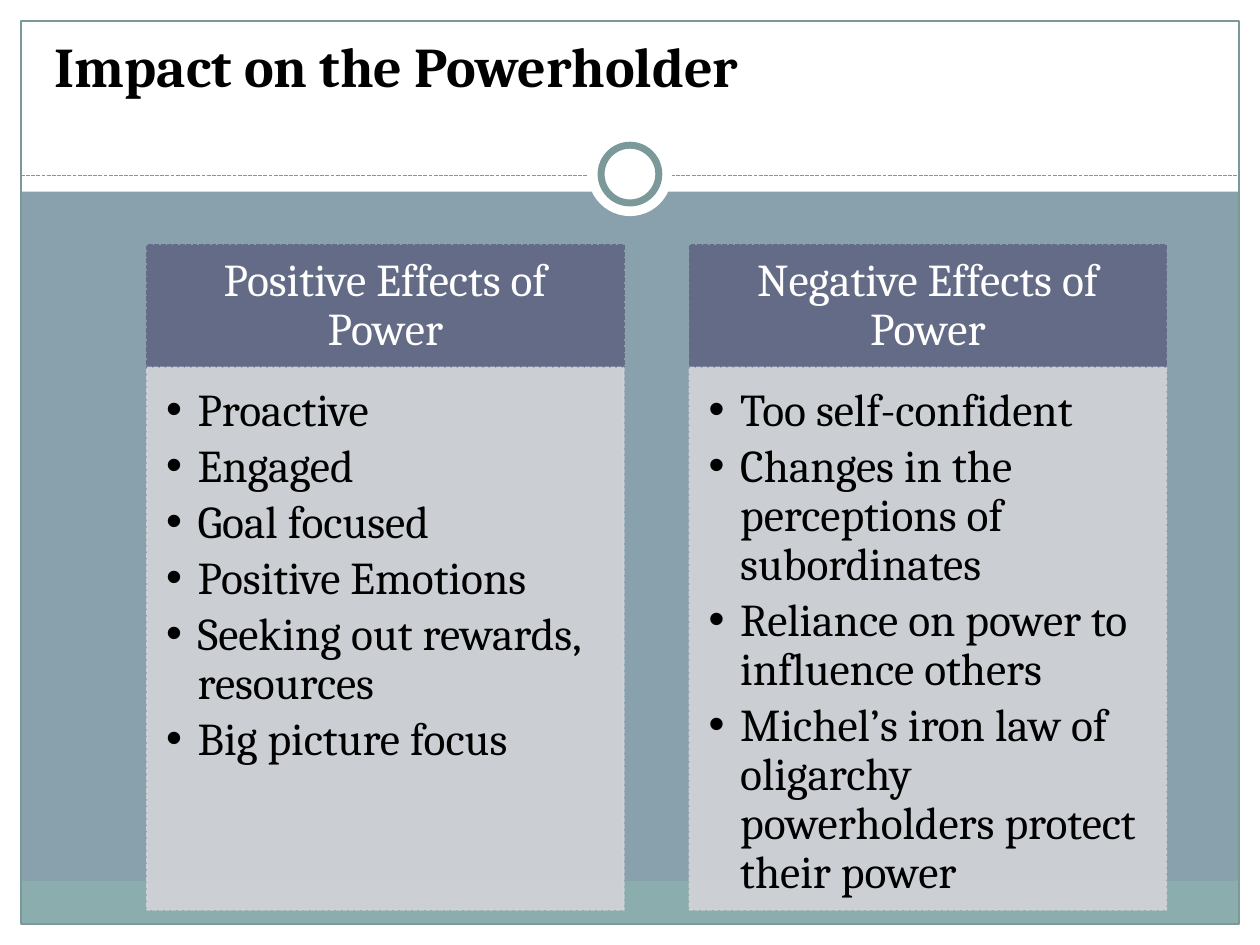
"""Build the slide comparing positive and negative effects of power on the powerholder."""
from pptx import Presentation
from pptx.dml.color import RGBColor
from pptx.enum import dml, shapes, text
from pptx.oxml.ns import qn
from pptx.util import Pt
from lxml import etree

TITLE = "Impact on the Powerholder"
COLUMNS = [
    ("Positive Effects of Power",
     ["Proactive", "Engaged", "Goal focused", "Positive Emotions",
      "Seeking out rewards, resources", "Big picture focus"]),
    ("Negative Effects of Power",
     ["Too self-confident", "Changes in the perceptions of subordinates",
      "Reliance on power to influence others",
      "Michel’s iron law of oligarchy powerholders protect their power"]),
]
FONT = "Cambria"
WHITE, BLACK, BACK, TEAL, FOOT = "FFFFFF", "000000", "88A1AD", "7C999A", "8CADAE"
HEAD, PANEL = "646B86", "D3D4D9"
W, H, EDGE = 720, 540, 12
LEFT, TOP, COL_W, STEP, HEAD_H, LIST_H = 84, 140, 272.5, 310, 70, 310
RECT, OVAL = shapes.MSO_SHAPE.RECTANGLE, shapes.MSO_SHAPE.OVAL
DECORATION = [
    (RECT, (0, H - EDGE, W, EDGE), WHITE, None, 0),
    (RECT, (0, 0, W, 109.5), WHITE, None, 0),
    (RECT, (0, 0, EDGE, H), WHITE, None, 0),
    (RECT, (W - EDGE, 0, EDGE, H), WHITE, None, 0),
    (RECT, (EDGE, 503.5, W - 2 * EDGE, 24.5), FOOT, None, 0),
    (RECT, (EDGE, EDGE, W - 2 * EDGE, H - 2 * EDGE), None, TEAL, 0.75),
]
RINGS = [
    (OVAL, (336, 75.5, 48, 48), WHITE, None, 0),
    (OVAL, (343.5, 83, 33, 33), WHITE, TEAL, 4),
]


def rgb(hex_color):
    return RGBColor.from_string(hex_color)


def paint(sp, fill=None, line=None, width=0, dashed=False, alpha=None):
    if fill:
        sp.fill.solid()
        sp.fill.fore_color.rgb = rgb(fill)
    else:
        sp.fill.background()
    if line:
        sp.line.color.rgb = rgb(line)
        sp.line.width = Pt(width)
        if dashed:
            sp.line.dash_style = dml.MSO_LINE.SQUARE_DOT
    else:
        sp.line.fill.background()
    if alpha:
        for color in sp.element.spPr.iter(qn("a:srgbClr")):
            etree.SubElement(color, qn("a:alpha")).set("val", str(alpha * 1000))


def place(sp, left, top, width, height):
    sp.left, sp.top, sp.width, sp.height = map(Pt, (left, top, width, height))


def draw(s, kind, box, fill, line, width):
    sp = s.shapes.add_shape(kind, *map(Pt, box))
    sp.shadow.inherit = False
    paint(sp, fill, line, width)


def write(sp, lines, size=26, color=BLACK, bold=False, align=text.PP_ALIGN.LEFT,
          anchor=text.MSO_ANCHOR.TOP, insets=(7.2, 3.6, 7.2, 3.6),
          spacing=0.9, after=0, bullet=False):
    tf = sp.text_frame
    tf.word_wrap, tf.auto_size = True, text.MSO_AUTO_SIZE.NONE
    tf.vertical_anchor = anchor
    tf.margin_left, tf.margin_top, tf.margin_right, tf.margin_bottom = map(Pt, insets)
    for i, line in enumerate(lines):
        p = tf.add_paragraph() if i else tf.paragraphs[0]
        p.alignment, p.line_spacing = align, spacing
        p.space_before, p.space_after = Pt(0), Pt(after)
        r = p.add_run()
        r.text = line
        r.font.name, r.font.size, r.font.bold = FONT, Pt(size), bold
        r.font.color.rgb = rgb(color)
        if bullet:
            pPr = p._p.get_or_add_pPr()
            pPr.set("marL", str(Pt(18)))
            pPr.set("indent", str(-Pt(18)))
            etree.SubElement(pPr, qn("a:buChar")).set("char", "•")


def divider(s, y):
    line = s.shapes.add_connector(
        shapes.MSO_CONNECTOR.STRAIGHT, Pt(EDGE), Pt(y), Pt(W - EDGE), Pt(y))
    line.line.color.rgb = rgb(TEAL)
    line.line.width = Pt(0.75)
    line.line.dash_style = dml.MSO_LINE.SQUARE_DOT
    etree.SubElement(line.element.spPr, qn("a:effectLst"))


def main():
    prs = Presentation()
    prs.slide_width, prs.slide_height = Pt(W), Pt(H)
    s = prs.slides.add_slide(prs.slide_layouts[4])
    s.background.fill.solid()
    s.background.fill.fore_color.rgb = rgb(BACK)
    title, *bodies = s.placeholders

    for item in DECORATION:
        draw(s, *item)
    divider(s, 100.5)
    for item in RINGS:
        draw(s, *item)

    for sp in (title, *bodies):
        s.shapes.element.append(sp.element)
    place(title, 24, 0, 672, 60)
    write(title, [TITLE], size=32, bold=True, anchor=text.MSO_ANCHOR.BOTTOM, spacing=1.0)

    for i, (heading, effects) in enumerate(COLUMNS):
        head, panel = bodies[2 * i:2 * i + 2]
        left = LEFT + i * STEP
        place(head, left, TOP, COL_W, HEAD_H)
        paint(head, HEAD, HEAD, 0.9, dashed=True)
        write(head, [heading], color=WHITE, align=text.PP_ALIGN.CENTER,
              anchor=text.MSO_ANCHOR.MIDDLE, insets=(14.5, 8.5, 14.5, 8.5))
        place(panel, left, TOP + HEAD_H, COL_W, LIST_H)
        paint(panel, PANEL, PANEL, 0.9, dashed=True, alpha=90)
        write(panel, effects, insets=(11, 11, 14.5, 16.5), after=4, bullet=True)

    prs.save("out.pptx")


if __name__ == "__main__":
    main()
